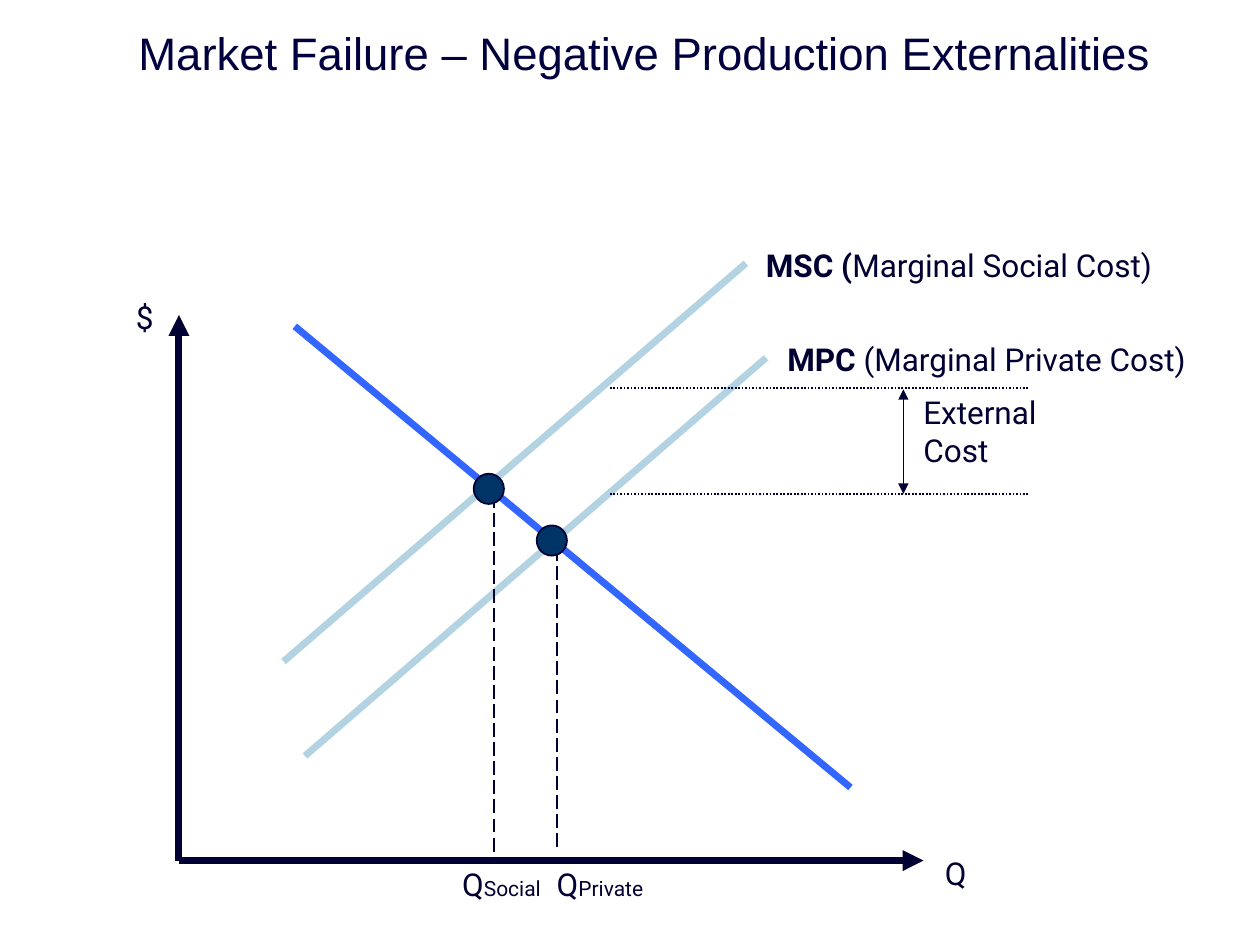
from pptx import Presentation
from pptx import util as u
from pptx.dml.color import RGBColor
from pptx.enum import dml, shapes, text
from pptx.oxml.ns import qn
from lxml import etree

INK, DEMAND, COST, POINT = "000032", "3366FF", "B4D3E2", "003366"
LONG_DASH, DOTS = dml.MSO_LINE.LONG_DASH, dml.MSO_LINE.ROUND_DOT


def rgb(value):
    return RGBColor.from_string(value)


class Diagram:
    """Style and current slide, with one method per kind of element."""

    font, size = "Roboto", 18

    def __init__(self, slide):
        self.s = slide

    def line(self, x1, y1, x2, y2, colour=INK, width=1, dash=None, ends=()):
        """Draw a straight line; ends may name headEnd and tailEnd."""
        c = self.s.shapes.add_connector(
            shapes.MSO_CONNECTOR.STRAIGHT,
            *(u.Inches(v) for v in (x1, y1, x2, y2)))
        c.line.color.rgb = rgb(colour)
        c.line.width = u.Pt(width)
        if dash:
            c.line.dash_style = dash
        sp_pr = c._element.spPr
        for end in ends:
            etree.SubElement(sp_pr.find(qn("a:ln")), qn("a:" + end), type="triangle")
        etree.SubElement(sp_pr, qn("a:effectLst"))

    def point(self, x, y, diameter=0.24):
        """Mark an equilibrium centred on x, y."""
        sp = self.s.shapes.add_shape(
            shapes.MSO_SHAPE.OVAL, u.Inches(x - diameter / 2),
            u.Inches(y - diameter / 2), u.Inches(diameter), u.Inches(diameter))
        sp.shadow.inherit = False
        sp.fill.solid()
        sp.fill.fore_color.rgb = rgb(POINT)
        sp.line.color.rgb = rgb(INK)
        sp.line.width = u.Pt(1)

    def label(self, x, y, w, h, *paragraphs, colour=INK, font=font, size=size,
              anchor=text.MSO_ANCHOR.TOP):
        """Add text; a paragraph is a list of (words, font settings) runs."""
        sp = self.s.shapes.add_textbox(*(u.Inches(v) for v in (x, y, w, h)))
        tf = sp.text_frame
        tf.word_wrap = True
        tf.vertical_anchor = anchor
        for i, runs in enumerate(paragraphs):
            p = tf.add_paragraph() if i else tf.paragraphs[0]
            p.font.name = font
            p.font.size = u.Pt(size)
            p.font.color.rgb = rgb(colour)
            for words, settings in runs:
                r = p.add_run()
                r.text = words
                for name, value in settings.items():
                    setattr(r.font, name, value)


def main():
    prs = Presentation()
    prs.slide_width, prs.slide_height = u.Inches(10), u.Inches(7.5)
    d = Diagram(prs.slides.add_slide(prs.slide_layouts[6]))
    bold, small = {"bold": True}, {"size": u.Pt(12)}

    d.label(1, 0.16, 9, 0.51,
            [("Market Failure – Negative Production Externalities", {})],
            colour="00003E", font="Arial", size=26, anchor=text.MSO_ANCHOR.MIDDLE)

    # Axes
    d.line(1.42, 2.5, 1.42, 6.83, width=4, ends=["headEnd"])
    d.line(1.42, 6.83, 7.33, 6.83, width=4, ends=["tailEnd"])
    d.label(0.98, 2.32, 0.36, 0.5, [("$", {})])
    d.label(7.4, 6.73, 0.44, 0.5, [("Q", {})])

    # Demand and cost curves
    d.line(2.34, 2.59, 6.75, 6.25, DEMAND, 4)
    d.line(4.42, 4.34, 4.42, 6.75, dash=LONG_DASH)
    d.line(2.25, 5.25, 5.92, 2.09, COST, 4)
    d.line(2.42, 6, 6.08, 2.84, COST, 4)
    d.label(5.98, 1.9, 4.02, 0.5, [("MSC (", bold), ("Marginal Social Cost)", {})])
    d.label(6.15, 2.65, 3.43, 0.5, [("MPC", bold), (" (Marginal Private Cost)", {})])

    # Equilibria and their quantities
    d.line(3.92, 3.92, 3.92, 6.83, dash=LONG_DASH)
    d.point(4.38, 4.29)
    d.point(3.88, 3.88)
    d.label(3.57, 6.82, 0.86, 0.5, [("Q", {}), ("Social", small)])
    d.label(4.32, 6.82, 0.91, 0.5, [("Q", {}), ("Private", small)])

    # External cost
    for y in (3.08, 3.92):
        d.line(4.84, y, 8.17, y, dash=DOTS)
    d.line(7.17, 3.09, 7.17, 3.92, ends=["headEnd", "tailEnd"])
    d.label(7.23, 3.07, 1.32, 0.9, [("External", {})], [("Cost", {})])

    prs.save("out.pptx")


if __name__ == "__main__":
    main()
